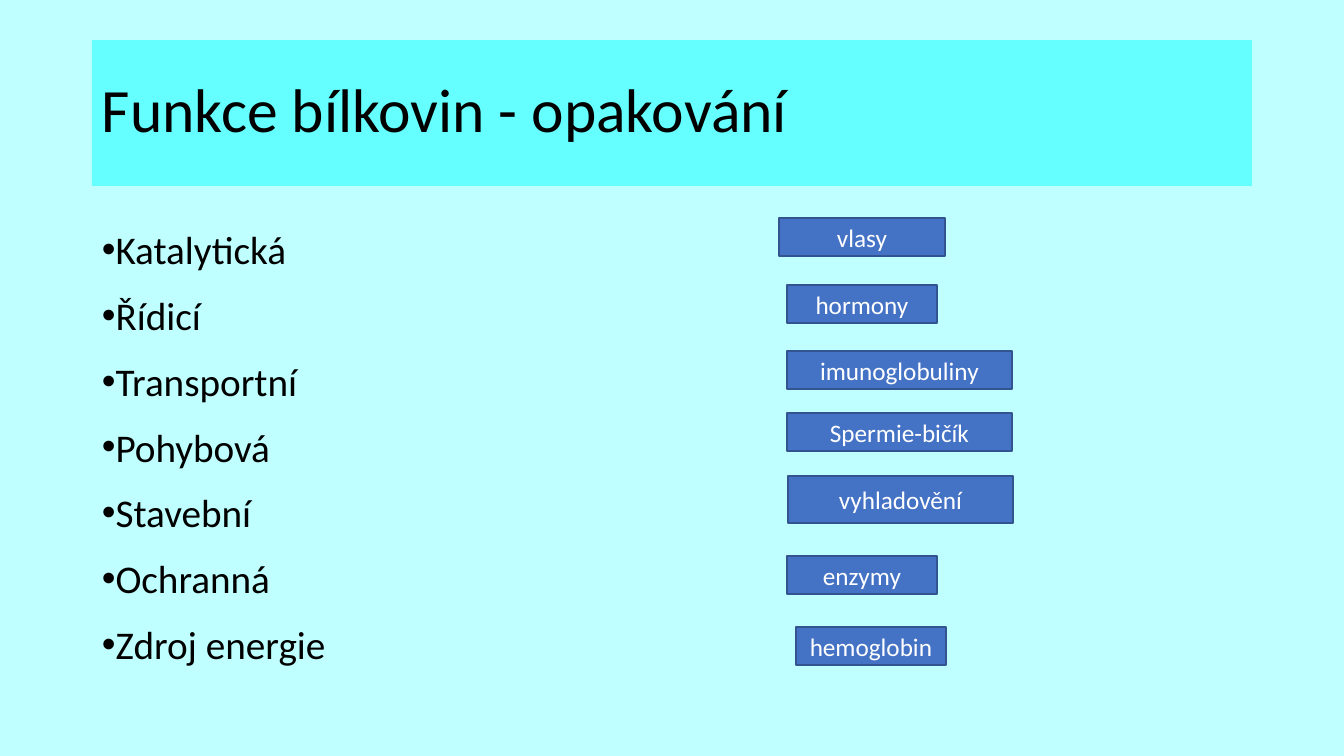
from dataclasses import dataclass

from lxml.etree import SubElement
from pptx import Presentation
from pptx.dml.color import RGBColor
from pptx.enum.shapes import MSO_SHAPE
from pptx.enum.text import MSO_ANCHOR, MSO_AUTO_SIZE, PP_ALIGN
from pptx.oxml.ns import qn
from pptx.util import Emu, Inches, Pt

EMU_PER_PX = 914400 / 100.8


@dataclass(frozen=True)
class Theme:
    font: str = "Calibri"
    bullet_font: str = "Arial"
    background: str = "C0FFFF"
    title_fill: str = "66FFFF"
    label_fill: str = "4472C4"
    label_line: str = "325491"
    dark_text: str = "000000"
    light_text: str = "FFFFFF"
    title_size: int = 44
    list_size: int = 28
    label_size: int = 18


THEME = Theme()

FUNCTIONS = ["Katalytická", "Řídicí", "Transportní", "Pohybová",
             "Stavební", "Ochranná", "Zdroj energie"]

# text, left, top, width, height in px
EXAMPLES = [
    ("vlasy", 779, 218, 166, 38),
    ("hormony", 787, 285, 150, 38),
    ("imunoglobuliny", 787, 351, 225, 38),
    ("Spermie-bičík", 787, 413, 225, 38),
    ("vyhladovění", 788, 476, 225, 47),
    ("enzymy", 787, 556, 150, 38),
    ("hemoglobin", 796, 627, 150, 38),
]


def px(length):
    return Emu(round(length * EMU_PER_PX))


def rgb(code):
    return RGBColor.from_string(code)


def add_bullet(paragraph):
    """Set a round bullet that hangs from a zero left margin."""
    properties = paragraph._p.get_or_add_pPr()
    properties.set("marL", "0")
    properties.set("indent", str(-Inches(0.25)))
    SubElement(properties, qn("a:buFont"), typeface=THEME.bullet_font)
    SubElement(properties, qn("a:buChar"), char="•")


def write(frame, lines, *, size, color, align=PP_ALIGN.LEFT,
          anchor=MSO_ANCHOR.TOP, spacing=None, bullets=False):
    frame.word_wrap = True
    frame.vertical_anchor = anchor
    for index, line in enumerate(lines):
        paragraph = frame.paragraphs[0] if index == 0 else frame.add_paragraph()
        paragraph.alignment = align
        if spacing:
            paragraph.line_spacing = spacing
        if bullets:
            add_bullet(paragraph)
        run = paragraph.add_run()
        run.text = line
        run.font.name = THEME.font
        run.font.size = Pt(size)
        run.font.color.rgb = rgb(color)


def add_box(slide, left, top, width, height, fill, line=None):
    box = slide.shapes.add_shape(
        MSO_SHAPE.RECTANGLE, px(left), px(top), px(width), px(height))
    box.shadow.inherit = False
    box.fill.solid()
    box.fill.fore_color.rgb = rgb(fill)
    if line:
        box.line.color.rgb = rgb(line)
        box.line.width = Pt(1)
    else:
        box.line.fill.background()
    return box


def add_title(slide, text):
    banner = add_box(slide, 92, 40, 1160, 146, THEME.title_fill)
    write(banner.text_frame, [text], size=THEME.title_size,
          color=THEME.dark_text, anchor=MSO_ANCHOR.MIDDLE, spacing=0.9)


def add_function_list(slide, functions):
    body = slide.shapes.add_textbox(px(92), px(202), px(1160), px(480))
    write(body.text_frame, functions, size=THEME.list_size,
          color=THEME.dark_text, spacing=1.4, bullets=True)
    body.text_frame.auto_size = MSO_AUTO_SIZE.TEXT_TO_FIT_SHAPE


def add_example(slide, text, left, top, width, height):
    label = add_box(slide, left, top, width, height,
                    THEME.label_fill, THEME.label_line)
    write(label.text_frame, [text], size=THEME.label_size,
          color=THEME.light_text, align=PP_ALIGN.CENTER,
          anchor=MSO_ANCHOR.MIDDLE)


def main():
    deck = Presentation()
    deck.slide_width, deck.slide_height = px(1344), px(756)
    slide = deck.slides.add_slide(deck.slide_layouts[6])
    slide.background.fill.solid()
    slide.background.fill.fore_color.rgb = rgb(THEME.background)
    add_title(slide, "Funkce bílkovin - opakování")
    add_function_list(slide, FUNCTIONS)
    for example in EXAMPLES:
        add_example(slide, *example)
    deck.save("out.pptx")


if __name__ == "__main__":
    main()
